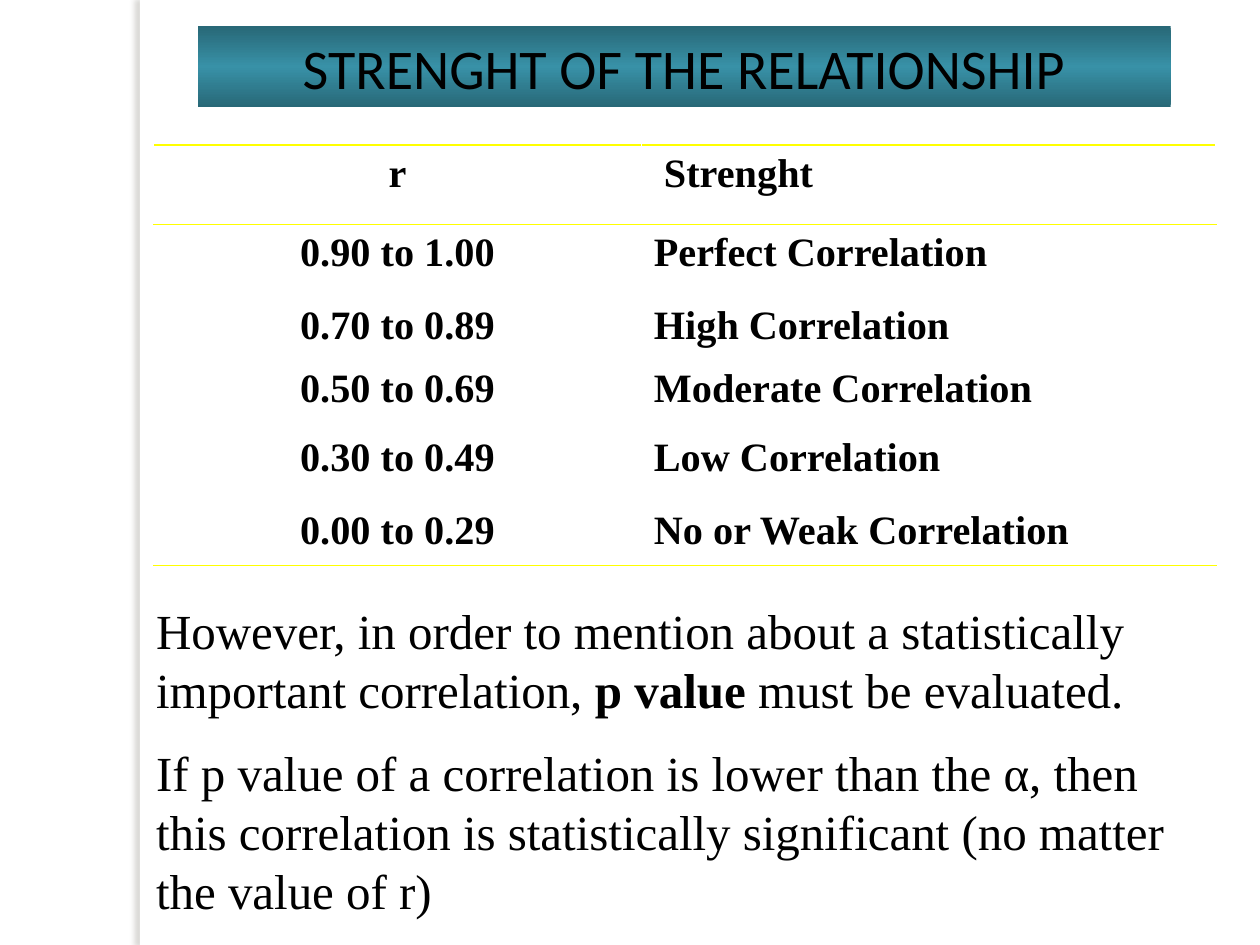
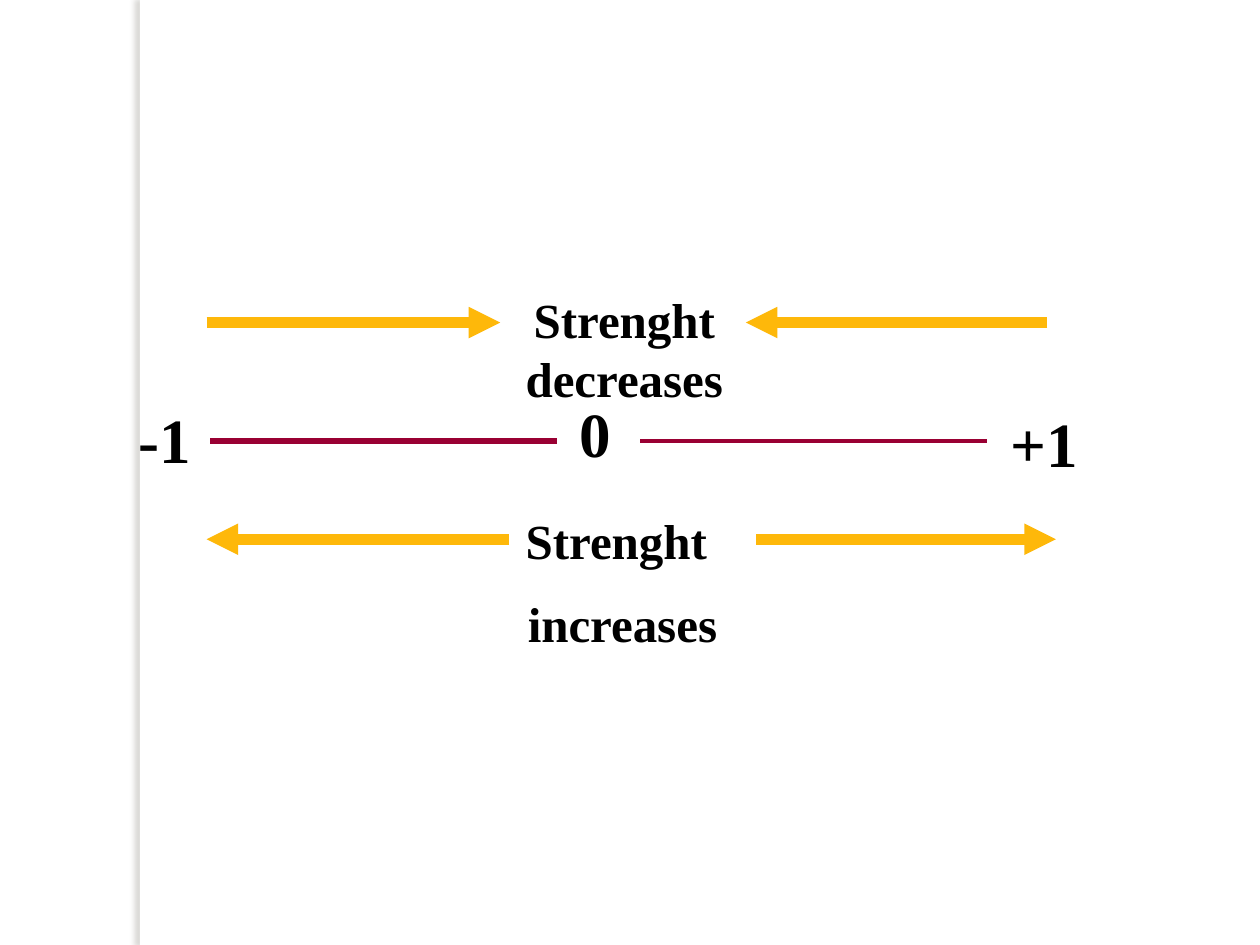
from pptx import Presentation
from pptx import util as u
from pptx.dml.color import RGBColor
from pptx.enum import shapes, text
from pptx.oxml import parse_xml
from pptx.oxml.ns import nsdecls

Inches, Pt = u.Inches, u.Pt
LEFT, CENTER = text.PP_ALIGN.LEFT, text.PP_ALIGN.CENTER
BLACK, WHITE, YELLOW = "000000", "FFFFFF", "FFFF00"
AMBER, CRIMSON = "FEB80A", "990033"
SHADE, TEAL, SHADOW = "286877", "3891A7", "736F63"
SERIF, SANS = "Times New Roman", "Calibri"

STRENGTHS = [
    ("r", " Strenght"),
    ("0.90 to 1.00", "Perfect Correlation"),
    ("0.70 to 0.89", "High Correlation"),
    ("0.50 to 0.69", "Moderate Correlation"),
    ("0.30 to 0.49", "Low Correlation"),
    ("0.00 to 0.29", "No or Weak Correlation"),
]
COLUMN_WIDTHS = (3.87, 4.56)
ROW_HEIGHTS = (0.63, 0.58, 0.5, 0.55, 0.58, 0.5)
RULED_EDGES = {0: "TB", 1: "T", 5: "B"}


def rgb(value):
    return RGBColor.from_string(value)


def drawing(tag, attributes="", content=""):
    """Make a DrawingML element."""
    return parse_xml(f"<a:{tag} {nsdecls('a')} {attributes}>{content}</a:{tag}>")


def solid(color):
    return f'<a:solidFill><a:srgbClr val="{color}"/></a:solidFill>'


def add_span(para, words, size, font=SERIF, bold=False):
    span = para.add_run()
    span.text = words
    formats = {"size": Pt(size), "name": font, "bold": bold}
    for name, value in formats.items():
        setattr(span.font, name, value)
    span.font.color.rgb = rgb(BLACK)


def add_rectangle(page, *place):
    box = page.shapes.add_shape(shapes.MSO_SHAPE.RECTANGLE, *map(Inches, place))
    box.shadow.inherit = False
    box.line.fill.background()
    return box


def add_page(deck):
    """Add a blank page with the shaded edge that all pages share."""
    page = deck.slides.add_slide(deck.slide_layouts[6])
    edge = add_rectangle(page, 1.11, 0, 0.08, 7.5)
    edge.fill.solid()
    edge.fill.fore_color.rgb = rgb(WHITE)
    effects = edge.element.spPr.find("{*}effectLst")
    effects.append(drawing(
        "outerShdw",
        f'blurRad="{Pt(3)}" dist="{Pt(3)}" dir="10800000" rotWithShape="0"',
        f'<a:srgbClr val="{SHADOW}"><a:alpha val="25000"/></a:srgbClr>'))
    return page


def add_title(page, words):
    box = add_rectangle(page, 1.57, 0.21, 7.72, 0.64)
    stops = "".join(
        f'<a:gs pos="{percent * 1000}"><a:srgbClr val="{color}"/></a:gs>'
        for percent, color in ((0, SHADE), (50, TEAL), (100, SHADE)))
    gradient = drawing("gradFill", 'rotWithShape="1"',
                       f'<a:gsLst>{stops}</a:gsLst><a:lin ang="5400000" scaled="1"/>')
    box.element.spPr.find("{*}prstGeom").addnext(gradient)
    para = box.text_frame.paragraphs[0]
    para.alignment = CENTER
    add_span(para, words, 32, SANS)


def add_text(page, place, paragraphs, size, align=LEFT, bold=False):
    """Add a text box; each paragraph is a list of (words, bold) or a string."""
    frame = page.shapes.add_textbox(*map(Inches, place)).text_frame
    frame.word_wrap = True
    frame.auto_size = text.MSO_AUTO_SIZE.SHAPE_TO_FIT_TEXT
    for index, spans in enumerate(paragraphs):
        para = frame.add_paragraph() if index else frame.paragraphs[0]
        formats = {"alignment": align, "line_spacing": Pt(round(size * 1.2, 1)),
                   "space_before": Pt(size / 2 if index else 0)}
        for name, value in formats.items():
            setattr(para, name, value)
        for words, weight in [(spans, bold)] if isinstance(spans, str) else spans:
            add_span(para, words, size, bold=weight)


def add_line(page, start, end, y, color, width, arrow=False):
    line = page.shapes.add_connector(
        shapes.MSO_CONNECTOR.STRAIGHT, *map(Inches, (start, y, end, y)))
    line.line.color.rgb = rgb(color)
    line.line.width = Pt(width)
    if arrow:
        line.line._get_or_add_ln().append(drawing("tailEnd", 'type="triangle"'))
    line.element.spPr.append(drawing("effectLst"))


def fill_cell(cell, words, align, edges):
    cell.fill.background()
    para = cell.text_frame.paragraphs[0]
    para.alignment = align
    add_span(para, words, 23, bold=True)
    properties = cell._tc.get_or_add_tcPr()
    for edge in reversed(edges):
        properties.insert(0, drawing(f"ln{edge}", f'w="{Pt(1)}"', solid(YELLOW)))


def add_strength_table(page):
    place = map(Inches, (1.22, 1.15, sum(COLUMN_WIDTHS), sum(ROW_HEIGHTS)))
    table = page.shapes.add_table(len(STRENGTHS), 2, *place).table
    table.first_row = table.horz_banding = False
    for column, width in zip(table.columns, COLUMN_WIDTHS):
        column.width = Inches(width)
    for index, (row, entries) in enumerate(zip(table.rows, STRENGTHS)):
        row.height = Inches(ROW_HEIGHTS[index])
        for cell, words, align in zip(row.cells, entries, (CENTER, LEFT)):
            fill_cell(cell, words, align, RULED_EDGES.get(index, ""))


def build_strength_page(deck):
    page = add_page(deck)
    add_strength_table(page)
    add_text(page, (1.14, 4.72, 8.58, 2.69), [
        [("However, in order to mention about a statistically important "
          "correlation, ", False),
         ("p value ", True), ("must be evaluated.", False)],
        "If p value of a correlation is lower than the α, then this correlation "
        "is statistically significant (no matter the value of r)",
    ], 28)
    add_title(page, "STRENGHT OF THE RELATIONSHIP")


def build_scale_page(deck):
    page = add_page(deck)
    add_text(page, (1.65, 4, 6.58, 1.28), ["Strenght ", "increases"], 28, CENTER, True)
    add_text(page, (3.83, 2.25, 2.25, 1.04), ["Strenght decreases"], 28, CENTER, True)
    for label, left, top, width in (
            ("-1", 1, 3.13, 0.83), ("0", 4.5, 3.08, 0.58), ("+1", 7.92, 3.16, 0.92)):
        add_text(page, (left, top, width, 0.7), [label], 36, bold=True)
    for start, width in ((1.67, 3), (5.08, 2.25)):
        add_line(page, start, start + 2.75, 3.5, CRIMSON, width)
    for start, end, y in ((1.64, 3.97, 2.56), (8.31, 5.92, 2.56),
                          (6, 8.38, 4.28), (4.04, 1.64, 4.28)):
        add_line(page, start, end, y, AMBER, 6, arrow=True)


def main():
    deck = Presentation()
    deck.slide_width, deck.slide_height = Inches(10), Inches(7.5)
    build_strength_page(deck)
    build_scale_page(deck)
    deck.save("out.pptx")


if __name__ == "__main__":
    main()
